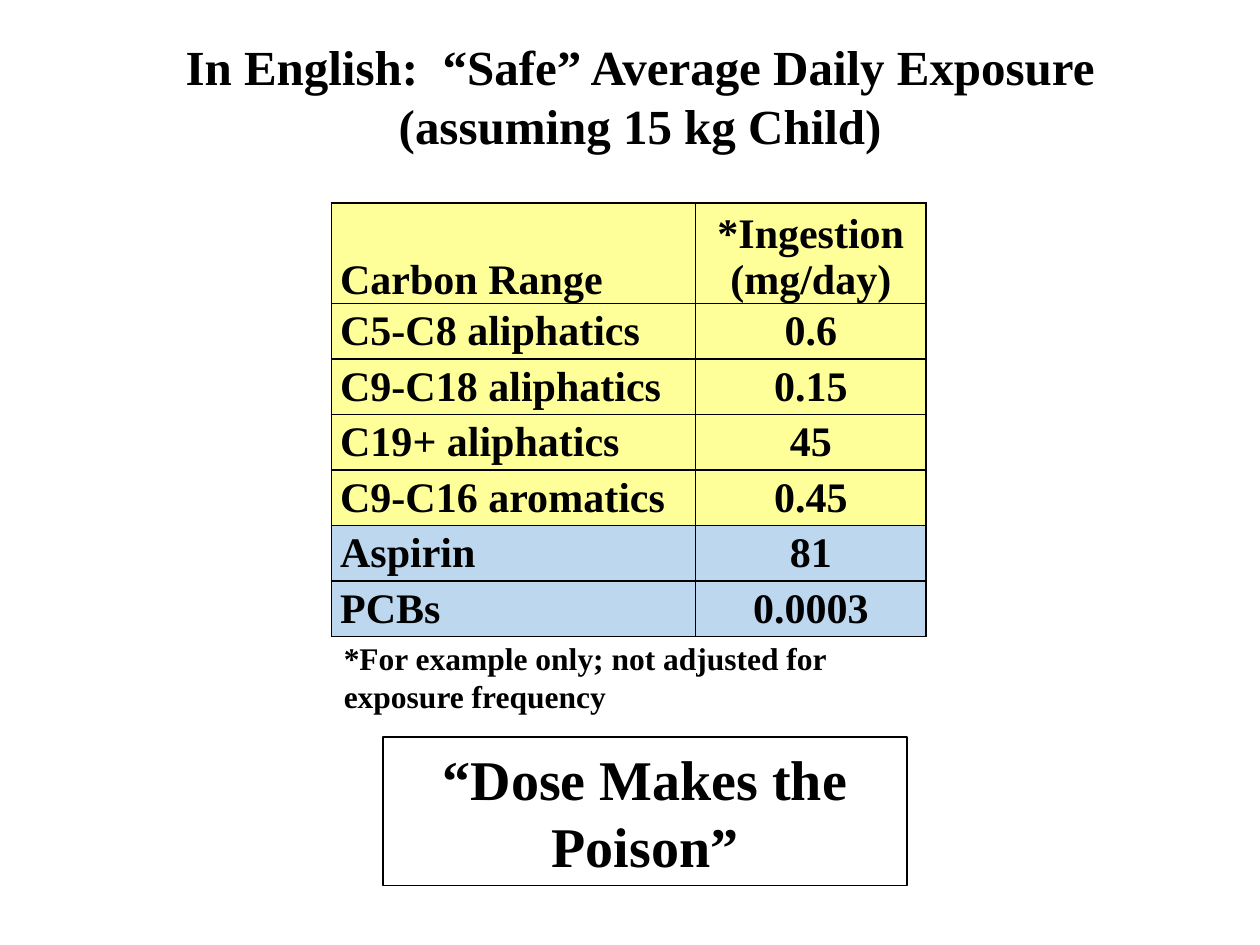
from lxml import etree
from pptx import Presentation
from pptx.dml.color import RGBColor
from pptx.enum.shapes import MSO_SHAPE
from pptx.enum.text import MSO_ANCHOR, PP_ALIGN
from pptx.oxml.ns import qn
from pptx.util import Inches, Pt

LEFT, CENTER, JUSTIFY = PP_ALIGN.LEFT, PP_ALIGN.CENTER, PP_ALIGN.JUSTIFY
TOP, MIDDLE, BOTTOM = MSO_ANCHOR.TOP, MSO_ANCHOR.MIDDLE, MSO_ANCHOR.BOTTOM
RECTANGLE = MSO_SHAPE.RECTANGLE
BLACK, YELLOW, BLUE = "000000", "FFFF99", "BDD7EE"
FONT = "Times New Roman"
COLUMN_WIDTHS = (2.89, 1.83)
HEADER_HEIGHT = 0.8
EXPOSURES = [
    ("C5-C8 aliphatics", "0.6", YELLOW),
    ("C9-C18 aliphatics", "0.15", YELLOW),
    ("C19+ aliphatics", "45", YELLOW),
    ("C9-C16 aromatics", "0.45", YELLOW),
    ("Aspirin", "81", BLUE),
    ("PCBs", "0.0003", BLUE),
]


def color(hex_value):
    return RGBColor.from_string(hex_value)


def set_all(target, values):
    for name, value in values.items():
        setattr(target, name, value)


def write(frame, lines, size, align, spacing=None):
    for index, line in enumerate(lines):
        paragraph = frame.add_paragraph() if index else frame.paragraphs[0]
        set_all(paragraph, {"alignment": align, "line_spacing": spacing})
        run = paragraph.add_run()
        run.text = line
        set_all(run.font, {"name": FONT, "size": Pt(size), "bold": True})
        run.font.color.rgb = color(BLACK)


def add_text(slide, box, lines, size, align):
    textbox = slide.shapes.add_textbox(*map(Inches, box))
    set_all(textbox.text_frame, {"word_wrap": True, "vertical_anchor": MIDDLE})
    write(textbox.text_frame, lines, size, align)


def add_borders(cell):
    properties = cell._tc.get_or_add_tcPr()
    for position, side in enumerate(("a:lnL", "a:lnR", "a:lnT", "a:lnB")):
        border = etree.Element(qn(side), w=str(Pt(1)))
        fill = etree.SubElement(border, qn("a:solidFill"))
        etree.SubElement(fill, qn("a:srgbClr"), val=BLACK)
        properties.insert(position, border)


def fill_cell(cell, lines, fill, align, anchor, spacing):
    set_all(cell, {
        "margin_left": Inches(0.07),
        "margin_right": Inches(0.07),
        "margin_top": 0,
        "margin_bottom": 0,
        "vertical_anchor": anchor,
    })
    cell.fill.solid()
    cell.fill.fore_color.rgb = color(fill)
    add_borders(cell)
    write(cell.text_frame, lines, 24, align, spacing)


def add_exposure_table(slide, box):
    frame = slide.shapes.add_table(
        len(EXPOSURES) + 1, len(COLUMN_WIDTHS), *map(Inches, box))
    table = frame.table
    set_all(table, {"first_row": False, "horz_banding": False})
    for column, width in zip(table.columns, COLUMN_WIDTHS):
        column.width = Inches(width)
    row_height = (box[3] - HEADER_HEIGHT) / len(EXPOSURES)
    for index, row in enumerate(table.rows):
        row.height = Inches(row_height if index else HEADER_HEIGHT)
    fill_cell(table.cell(0, 0), ["Carbon Range"], YELLOW, LEFT, BOTTOM, 1.1)
    fill_cell(table.cell(0, 1), ["*Ingestion", "(mg/day)"], YELLOW, CENTER, BOTTOM, None)
    for index, (substance, dose, fill) in enumerate(EXPOSURES, 1):
        fill_cell(table.cell(index, 0), [substance], fill, JUSTIFY, TOP, 1.1)
        fill_cell(table.cell(index, 1), [dose], fill, CENTER, TOP, 1.1)


def add_motto(slide, box):
    motto = slide.shapes.add_shape(RECTANGLE, *map(Inches, box))
    motto.shadow.inherit = False
    motto.fill.background()
    motto.line.color.rgb = color(BLACK)
    motto.line.width = Pt(0.75)
    set_all(motto.text_frame, {"word_wrap": True, "vertical_anchor": MIDDLE})
    write(motto.text_frame, ["“Dose Makes the Poison”"], 32, CENTER)


def main():
    presentation = Presentation()
    set_all(presentation, {"slide_width": Inches(10), "slide_height": Inches(7.5)})
    slide = presentation.slides.add_slide(presentation.slide_layouts[6])
    add_text(slide, (0.7, 0.24, 8.76, 1.04),
             ["In English:  “Safe” Average Daily Exposure", "(assuming 15 kg Child)"],
             28, CENTER)
    add_exposure_table(slide, (2.63, 1.61, 4.72, 3.44))
    add_text(slide, (2.63, 5.02, 4.22, 0.71),
             ["*For example only; not adjusted for exposure frequency"], 18, LEFT)
    add_motto(slide, (3.04, 5.85, 4.16, 1.18))
    presentation.save("out.pptx")


if __name__ == "__main__":
    main()
